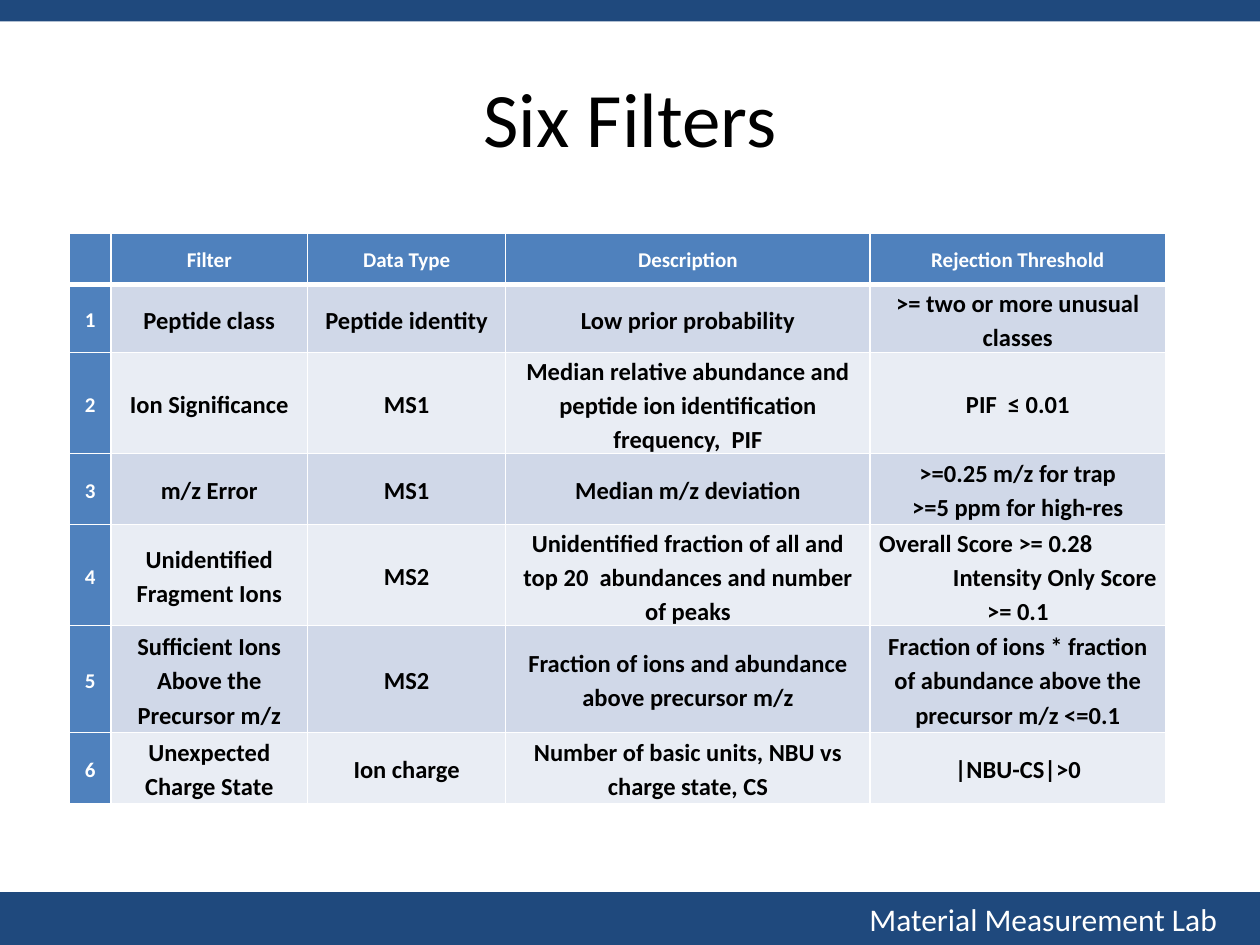
from dataclasses import dataclass

from lxml import etree
from pptx import Presentation
from pptx.dml.color import RGBColor
from pptx.enum import shapes, text
from pptx.oxml.ns import qn
from pptx.util import Emu, Inches, Pt

LEFT, CENTER, RIGHT = text.PP_ALIGN.LEFT, text.PP_ALIGN.CENTER, text.PP_ALIGN.RIGHT
MIDDLE = text.MSO_ANCHOR.MIDDLE


@dataclass(frozen=True)
class Theme:
    """Colours, font and type sizes of the slide."""
    font: str = "Calibri"
    band: str = "1F497D"
    head: str = "4F81BD"
    odd: str = "D0D8E8"
    even: str = "E9EDF4"
    light: str = "FFFFFF"
    dark: str = "000000"
    title: int = 44
    footer: int = 18
    label: int = 12
    body: int = 14


T = Theme()
HEADERS = ["", "Filter", "Data Type", "Description", "Rejection Threshold"]
FILTERS = [
    ["Peptide class", "Peptide identity", "Low prior probability",
     ">= two or more unusual classes"],
    ["Ion Significance", "MS1",
     "Median relative abundance and peptide ion identification frequency,  PIF",
     "PIF  ≤ 0.01"],
    ["m/z Error", "MS1", "Median m/z deviation",
     [(">=0.25 m/z for trap", CENTER), (">=5 ppm for high-res", CENTER)]],
    ["Unidentified Fragment Ions", "MS2",
     "Unidentified fraction of all and top 20  abundances and number of peaks",
     [("Overall Score >= 0.28", LEFT), ("Intensity Only Score", RIGHT),
      (">= 0.1", CENTER)]],
    ["Sufficient Ions Above the Precursor m/z", "MS2",
     "Fraction of ions and abundance above precursor m/z",
     "Fraction of ions * fraction of abundance above the precursor m/z <=0.1"],
    ["Unexpected Charge State", "Ion charge",
     "Number of basic units, NBU vs charge state, CS", "|NBU-CS|>0"],
]
COLUMNS = [0.33, 1.56, 1.57, 2.89, 2.34]
ROWS = [0.41, 0.43, 0.56, 0.56, 0.56, 0.85, 0.56]


def assign(obj, values):
    """Set every attribute named in a dict."""
    for name, value in values.items():
        setattr(obj, name, value)


def share(prs, left, top, width, height):
    """Turn shares of the slide into a box."""
    w, h = prs.slide_width, prs.slide_height
    return [Emu(int(n)) for n in (left * w, top * h, width * w, height * h)]


def write(tf, lines, size, color, bold=False, spacing=1.0):
    """Write (text, alignment) lines into a text frame."""
    for i, (line, align) in enumerate(lines):
        p = tf.paragraphs[0] if i == 0 else tf.add_paragraph()
        assign(p, {"alignment": align, "line_spacing": spacing})
        if line:
            r = p.add_run()
            r.text = line
            assign(r.font, {"name": T.font, "size": Pt(size), "bold": bold})
            r.font.color.rgb = RGBColor.from_string(color)


def add_band(s, box, label=""):
    """Draw a full-width band with an optional right-aligned label."""
    sp = s.shapes.add_shape(shapes.MSO_SHAPE.RECTANGLE, *box)
    sp.shadow.inherit = False
    sp.fill.solid()
    sp.fill.fore_color.rgb = RGBColor.from_string(T.band)
    sp.line.fill.background()
    if label:
        assign(sp.text_frame, {"vertical_anchor": MIDDLE,
                               "margin_right": Inches(0.34)})
        write(sp.text_frame, [(label, RIGHT)], T.footer, T.light)


def add_title(s, box, title):
    """Place the centred title."""
    tf = s.shapes.add_textbox(*box).text_frame
    assign(tf, {"word_wrap": True, "vertical_anchor": MIDDLE})
    write(tf, [(title, CENTER)], T.title, T.dark)


def add_borders(cell, widths):
    """Rule the sides of a cell in points."""
    tc_pr = cell._tc.get_or_add_tcPr()
    for side, width in widths.items():
        ln = etree.SubElement(tc_pr, qn(f"a:ln{side}"), w=str(Pt(width)))
        fill = etree.SubElement(ln, qn("a:solidFill"))
        etree.SubElement(fill, qn("a:srgbClr"), val=T.light)


def fill_cell(cell, content, row, col):
    """Format and write one table cell."""
    is_label = row == 0 or col == 0
    assign(cell, {"vertical_anchor": MIDDLE, "margin_left": Inches(0.07),
                  "margin_right": Inches(0.07), "margin_top": 0,
                  "margin_bottom": 0})
    add_borders(cell, {"L": 1, "R": 1, "T": 3 if row == 1 else 1,
                       "B": 3 if row == 0 else 1})
    fill = T.head if is_label else T.odd if row % 2 else T.even
    cell.fill.solid()
    cell.fill.fore_color.rgb = RGBColor.from_string(fill)
    lines = [(content, CENTER)] if isinstance(content, str) else content
    size, color = (T.label, T.light) if is_label else (T.body, T.dark)
    write(cell.text_frame, lines, size, color, bold=True, spacing=1.15)


def add_filter_table(s, box):
    """Build the numbered table of filters."""
    data = [HEADERS] + [[str(n)] + row for n, row in enumerate(FILTERS, 1)]
    table = s.shapes.add_table(len(ROWS), len(COLUMNS), *box).table
    for column, width in zip(table.columns, COLUMNS):
        column.width = int(box[2] * width / sum(COLUMNS))
    for row, height in zip(table.rows, ROWS):
        row.height = int(box[3] * height / sum(ROWS))
    for i, row in enumerate(data):
        for j, content in enumerate(row):
            fill_cell(table.cell(i, j), content, i, j)


def main():
    """Build and save the slide."""
    prs = Presentation()
    assign(prs, {"slide_width": Inches(10), "slide_height": Inches(7.5)})
    s = prs.slides.add_slide(prs.slide_layouts[6])
    add_band(s, share(prs, 0, 0, 1, 0.17 / 7.5))
    add_band(s, share(prs, 0, 7.08 / 7.5, 1, 0.42 / 7.5),
             "Material Measurement Lab")
    add_title(s, share(prs, 0.05, 0.04, 0.9, 1.25 / 7.5), "Six Filters")
    add_filter_table(s, share(prs, 0.055, 1.85 / 7.5, 0.87, 3.93 / 7.5))
    prs.save("out.pptx")


if __name__ == "__main__":
    main()
